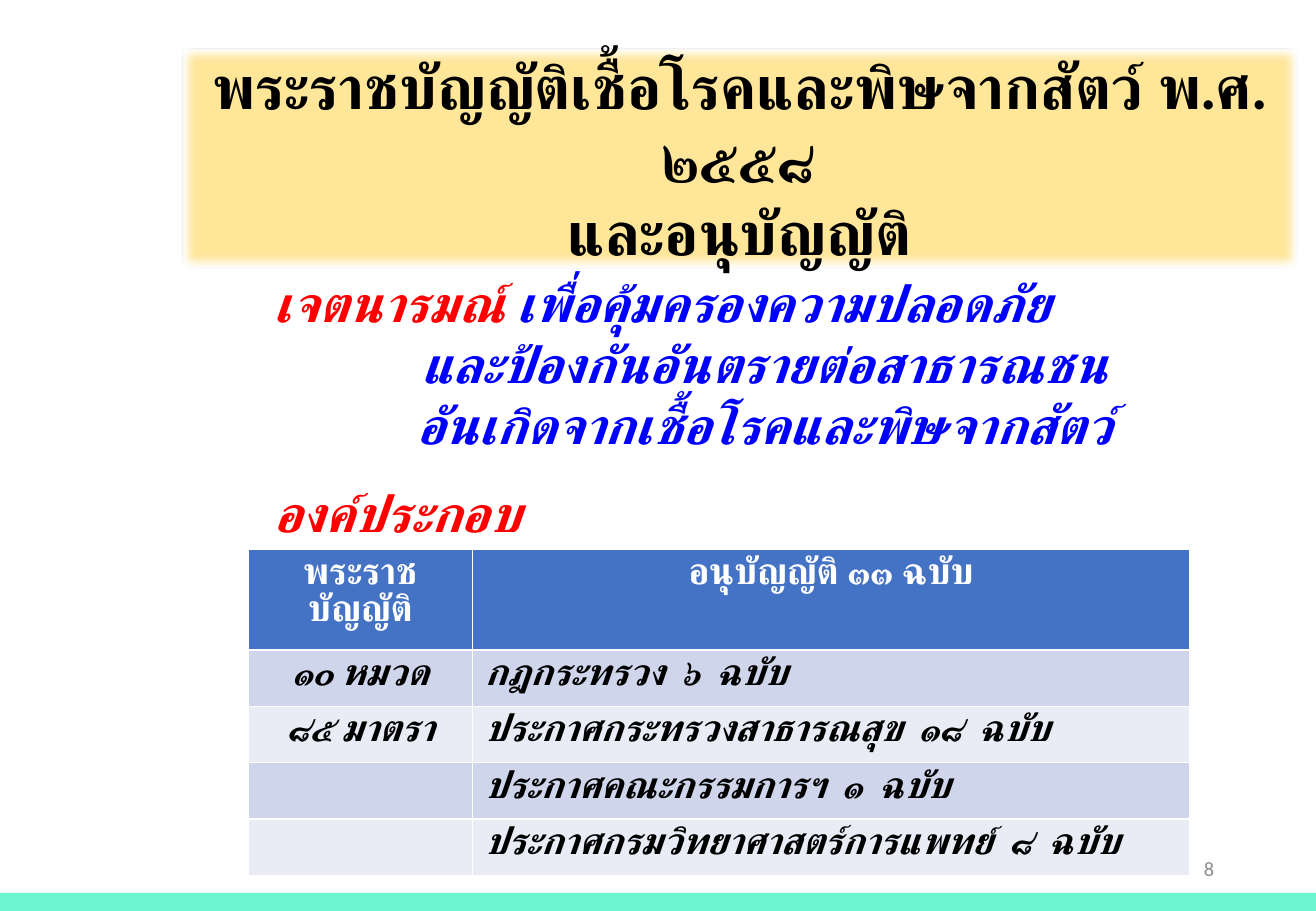
from dataclasses import dataclass

from lxml.etree import SubElement
from pptx import Presentation
from pptx.dml.color import RGBColor
from pptx.enum.shapes import MSO_SHAPE as SHAPE
from pptx.enum.text import MSO_ANCHOR as ANCHOR, MSO_AUTO_SIZE as AUTO, PP_ALIGN as ALIGN
from pptx.oxml.ns import qn
from pptx.util import Cm, Pt


@dataclass(frozen=True)
class Theme:
    """Colours, fonts and type sizes of the slide."""
    font: str = "Lato"
    number_font: str = "Calibri"
    title: int = 36
    body: int = 30
    cell: int = 22
    number: int = 12
    ink: str = "000000"
    white: str = "FFFFFF"
    label: str = "FF0000"
    intent: str = "0000FF"
    grey: str = "8C8C8C"
    banner: str = "FFE699"
    banner_line: str = "325491"
    bar: str = "6CF4D2"
    header: str = "4472C4"
    bands: tuple = ("CFD5EA", "E9EBF5")


T = Theme()
TITLE = ["พระราชบัญญัติเชื้อโรคและพิษจากสัตว์ พ.ศ. ๒๕๕๘", "และอนุบัญญัติ"]
INTENT = [
    (ALIGN.LEFT, 0, [("เจตนารมณ์", T.label), ("\tเพื่อคุ้มครองความปลอดภัย", T.intent)]),
    (ALIGN.CENTER, 0, [("และป้องกันอันตรายต่อสาธารณชน", T.intent)]),
    (ALIGN.CENTER, 0, [("อันเกิดจากเชื้อโรคและพิษจากสัตว์", T.intent)]),
    (ALIGN.LEFT, 16.6, [("องค์ประกอบ", T.label)]),
]
ROWS = [
    ("พระราชบัญญัติ", "อนุบัญญัติ ๓๓ ฉบับ"),
    ("๑๐ หมวด", "กฎกระทรวง  ๖  ฉบับ"),
    ("๘๕ มาตรา", "ประกาศกระทรวงสาธารณสุข  ๑๘  ฉบับ"),
    ("", "ประกาศคณะกรรมการฯ  ๑  ฉบับ"),
    ("", "ประกาศกรมวิทยาศาสตร์การแพทย์  ๘  ฉบับ"),
]


def apply(obj, values):
    """Set each attribute named in a dict of values."""
    for name, value in values.items():
        setattr(obj, name, value)


def place(sp, left, top, width, height):
    """Move and size a shape, in centimetres."""
    apply(sp, dict(left=Cm(left), top=Cm(top), width=Cm(width), height=Cm(height)))


def paint(fill, color):
    """Give a fill one solid colour."""
    fill.solid()
    fill.fore_color.rgb = RGBColor.from_string(color)


def add_run(p, text, size, color, bold=True, italic=False, font=T.font):
    """Add a run, with its font set for Latin and Thai script."""
    r = p.add_run()
    r.text = text
    apply(r.font, dict(size=Pt(size), bold=bold, italic=italic, name=font))
    r.font.color.rgb = RGBColor.from_string(color)
    SubElement(r.font._element, qn("a:cs"), typeface=font)


def next_paragraph(tf, index):
    """Return the first paragraph, or a new one after it."""
    return tf.add_paragraph() if index else tf.paragraphs[0]


def add_bar(s, width):
    """Draw the strip along the foot of the slide."""
    bar = s.shapes.add_shape(SHAPE.RECTANGLE, 0, Cm(18.67), width, Cm(0.38))
    bar.shadow.inherit = False
    paint(bar.fill, T.bar)
    bar.line.fill.background()


def fill_title(sp):
    """Turn the title into a soft-edged rounded banner."""
    place(sp, 3.81, 1.02, 23.29, 4.57)
    geom = SubElement(sp._element.spPr, qn("a:prstGeom"), prst="roundRect")
    SubElement(geom, qn("a:avLst"))
    paint(sp.fill, T.banner)
    paint(sp.line.fill, T.banner_line)
    sp.line.width = Pt(1)
    effects = SubElement(sp._element.spPr, qn("a:effectLst"))
    SubElement(effects, qn("a:softEdge"), rad="63500")
    tf = sp.text_frame
    apply(tf, dict(word_wrap=True, auto_size=AUTO.NONE, vertical_anchor=ANCHOR.MIDDLE))
    for i, text in enumerate(TITLE):
        p = next_paragraph(tf, i)
        p.alignment = ALIGN.CENTER
        add_run(p, text, T.title, T.ink)


def fill_intent(sp):
    """Write the purpose of the act in the body placeholder."""
    place(sp, 5.46, 5.56, 21.03, 6.07)
    tf = sp.text_frame
    apply(tf, dict(word_wrap=True, auto_size=AUTO.NONE, vertical_anchor=ANCHOR.TOP))
    for i, (align, before, runs) in enumerate(INTENT):
        p = next_paragraph(tf, i)
        pPr = p._p.get_or_add_pPr()
        pPr.set("marL", "0")
        pPr.set("indent", "0")
        SubElement(pPr, qn("a:buNone"))
        tabs = SubElement(pPr, qn("a:tabLst"))
        SubElement(tabs, qn("a:tab"), pos=str(Cm(7.83)), algn="l")
        apply(p, dict(alignment=align, space_before=Pt(before), line_spacing=1.0))
        for text, color in runs:
            add_run(p, text, T.body, color, italic=True)


def add_parts_table(s):
    """Add the table of the act and its subordinate laws."""
    table = s.shapes.add_table(len(ROWS), 2, Cm(5.18), Cm(11.48), Cm(19.69), Cm(6.83)).table
    for column, width in zip(table.columns, (4.7, 14.99)):
        column.width = Cm(width)
    for i, texts in enumerate(ROWS):
        head = i == 0
        table.rows[i].height = Cm(2.11 if head else 1.18)
        for j, text in enumerate(texts):
            cell = table.cell(i, j)
            paint(cell.fill, T.header if head else T.bands[(i - 1) % 2])
            if text:
                p = cell.text_frame.paragraphs[0]
                align = ALIGN.CENTER if head or j == 0 else ALIGN.LEFT
                apply(p, dict(alignment=align, line_spacing=0.83))
                add_run(p, text, T.cell, T.white if head else T.ink, italic=not head)


def add_page_number(s, text):
    """Add the page number at the lower right."""
    tf = s.shapes.add_textbox(Cm(19.43), Cm(17.65), Cm(6.2), Cm(1.02)).text_frame
    apply(tf, dict(word_wrap=True, vertical_anchor=ANCHOR.MIDDLE))
    p = tf.paragraphs[0]
    p.alignment = ALIGN.RIGHT
    add_run(p, text, T.number, T.grey, bold=False, font=T.number_font)


def main():
    """Build the slide and save it."""
    prs = Presentation()
    apply(prs, dict(slide_width=Cm(27.51), slide_height=Cm(19.05)))
    s = prs.slides.add_slide(prs.slide_layouts[1])
    add_bar(s, prs.slide_width)
    fill_title(s.shapes.title)
    fill_intent(s.placeholders[1])
    add_parts_table(s)
    add_page_number(s, "8")
    prs.save("out.pptx")


if __name__ == "__main__":
    main()
